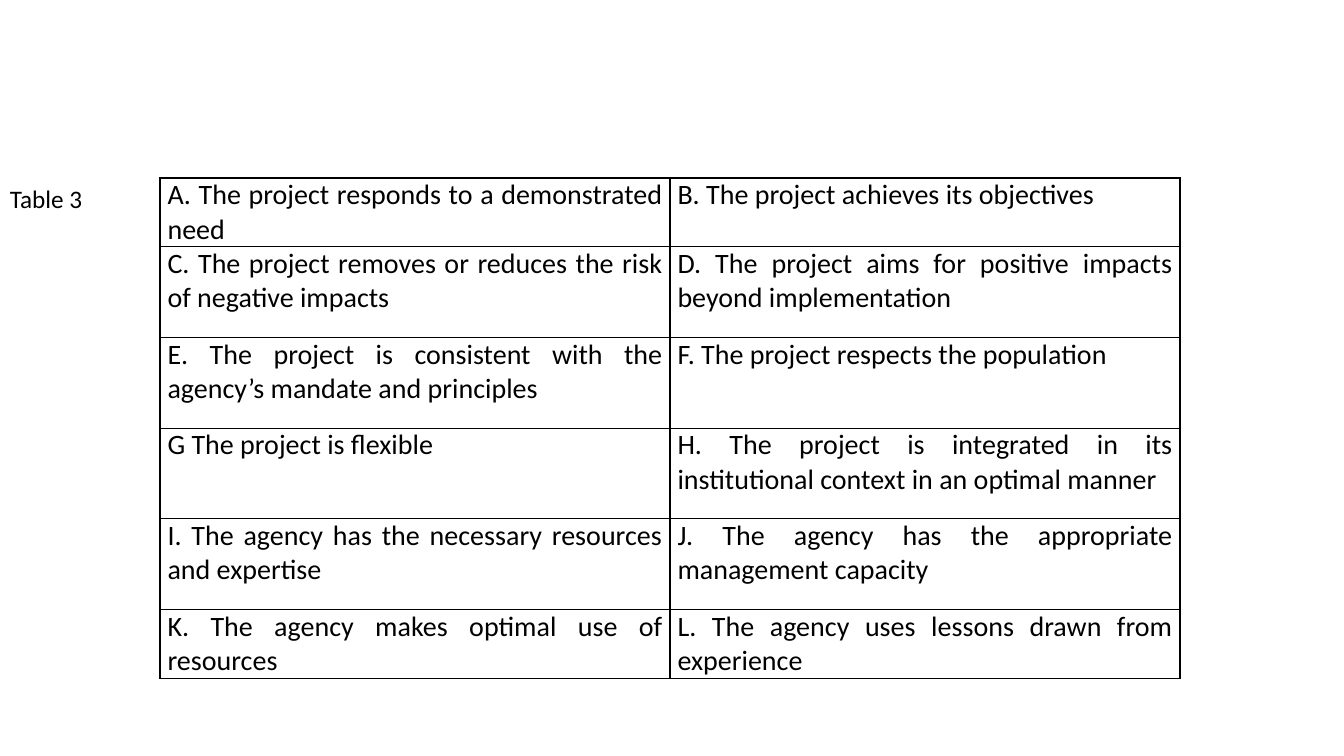
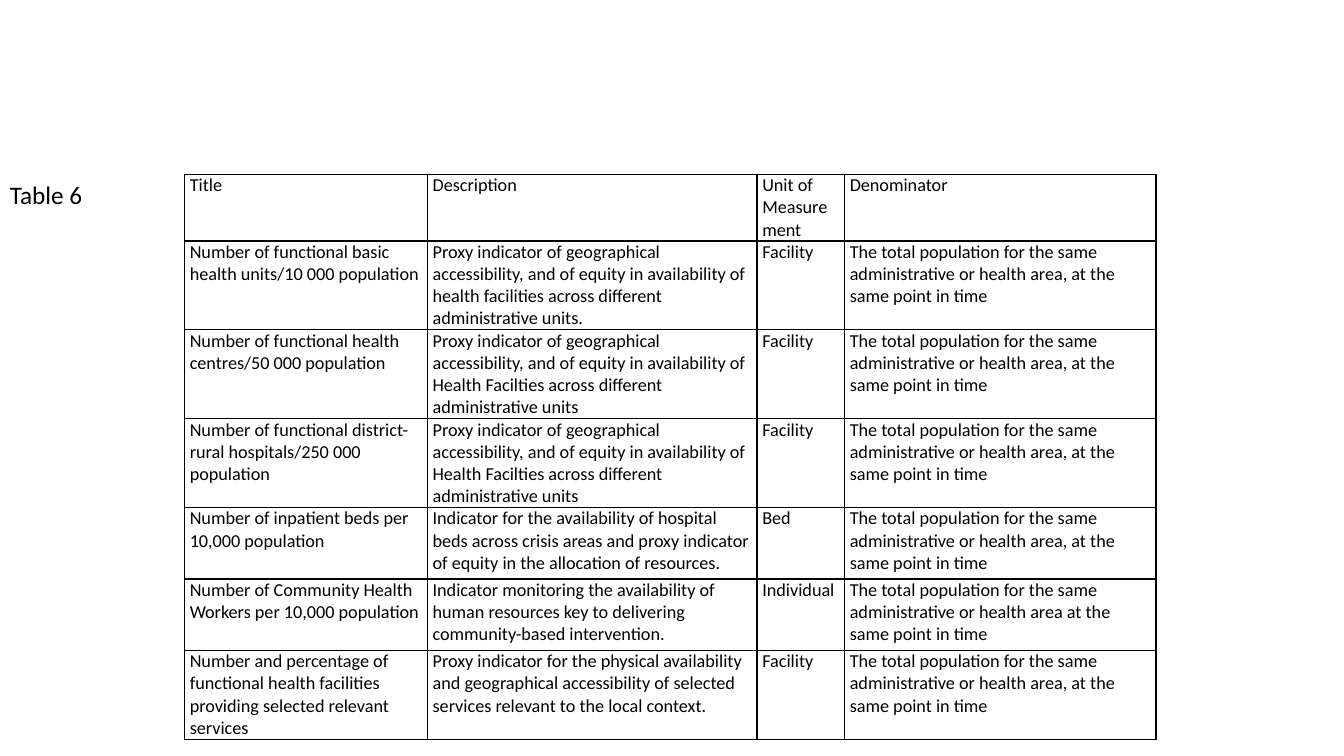
from dataclasses import dataclass

from lxml.etree import SubElement
from pptx import Presentation
from pptx.dml.color import RGBColor
from pptx.enum.text import MSO_AUTO_SIZE, PP_ALIGN
from pptx.oxml.ns import qn
from pptx.slide import Slide
from pptx.table import _Cell
from pptx.util import Pt


@dataclass(frozen=True)
class Theme:
    font: str = "Calibri"
    ink: str = "000000"
    rule: float = 1
    label: float = 18
    large: float = 20
    small: float = 13


@dataclass(frozen=True)
class Sheet:
    label: str
    drop: float
    left: float
    top: float
    cols: list[float]
    rows: list[float]
    inset: float
    size: float
    align: PP_ALIGN
    cells: list[tuple[str, ...]]


THEME = Theme()
AREA = "The total population for the same administrative or health area"
TOTAL = f"{AREA}, at the same point in time"
ACCESS = "Proxy indicator of geographical accessibility, and of equity in availability of"
ACROSS = "across different administrative units"

SHEETS = [
    Sheet(
        "Table 3", 29, 114.3, 127.2,
        [364.3] * 2, [48.8] + [64.8] * 4 + [48.8],
        5.4, THEME.large, PP_ALIGN.JUSTIFY,
        [
            ("A. The project responds to a demonstrated need",
             "B. The project achieves its objectives"),
            ("C. The project removes or reduces the risk of negative impacts",
             "D. The project aims for positive impacts beyond implementation"),
            ("E. The project is consistent with the agency’s mandate and principles",
             "F. The project respects the population"),
            ("G The project is flexible",
             "H. The project is integrated in its institutional context in an optimal manner"),
            ("I. The agency has the necessary resources and expertise",
             "J. The agency has the appropriate management capacity"),
            ("K. The agency makes optimal use of resources",
             "L. The agency uses lessons drawn from experience"),
        ],
    ),
    Sheet(
        "Table 6", 51, 131.8, 124.6,
        [173.5, 235.5, 62.5, 222.5], [47.5] + [63.5] * 3 + [51] * 2 + [63.5],
        3.75, THEME.small, PP_ALIGN.LEFT,
        [
            ("Title", "Description", "Unit of Measurement", "Denominator"),
            ("Number of functional basic health units/10 000 population",
             f"{ACCESS} health facilities {ACROSS}.", "Facility", TOTAL),
            ("Number of functional health centres/50 000 population",
             f"{ACCESS} Health Facilties {ACROSS}", "Facility", TOTAL),
            ("Number of functional district-rural hospitals/250 000 population",
             f"{ACCESS} Health Facilties {ACROSS}", "Facility", TOTAL),
            ("Number of inpatient beds per 10,000 population",
             "Indicator for the availability of hospital beds across crisis areas "
             "and proxy indicator of equity in the allocation of resources.",
             "Bed", TOTAL),
            ("Number of Community Health Workers per 10,000 population",
             "Indicator monitoring the availability of human resources key to "
             "delivering community-based intervention.",
             "Individual", f"{AREA} at the same point in time"),
            ("Number and percentage of functional health facilities providing "
             "selected relevant services",
             "Proxy indicator for the physical availability and geographical "
             "accessibility of selected services relevant to the local context.",
             "Facility", TOTAL),
        ],
    ),
]


def write(frame, text: str, size: float, align: PP_ALIGN) -> None:
    line = frame.paragraphs[0]
    line.text = text
    line.alignment = align
    line.font.name = THEME.font
    line.font.size = Pt(size)
    line.font.color.rgb = RGBColor.from_string(THEME.ink)


def frame_cell(cell: _Cell) -> None:
    props = cell._tc.get_or_add_tcPr()
    for side in "LRTB":
        edge = SubElement(props, qn(f"a:ln{side}"), w=str(Pt(THEME.rule)))
        fill = SubElement(edge, qn("a:solidFill"))
        SubElement(fill, qn("a:srgbClr"), val=THEME.ink)
    cell.fill.background()


def add_grid(slide: Slide, sheet: Sheet) -> None:
    table = slide.shapes.add_table(
        len(sheet.rows), len(sheet.cols), Pt(sheet.left), Pt(sheet.top),
        Pt(sum(sheet.cols)), Pt(sum(sheet.rows)),
    ).table
    table.first_row = False
    table.horz_banding = False
    for col, width in zip(table.columns, sheet.cols):
        col.width = Pt(width)
    for row, height, texts in zip(table.rows, sheet.rows, sheet.cells):
        row.height = Pt(height)
        for cell, text in zip(row.cells, texts):
            cell.margin_left = cell.margin_right = Pt(sheet.inset)
            cell.margin_top = cell.margin_bottom = Pt(0)
            write(cell.text_frame, text, sheet.size, sheet.align)
            frame_cell(cell)


def add_label(slide: Slide, sheet: Sheet) -> None:
    box = slide.shapes.add_textbox(Pt(0), Pt(sheet.top), Pt(67), Pt(sheet.drop))
    frame = box.text_frame
    frame.word_wrap = False
    frame.auto_size = MSO_AUTO_SIZE.SHAPE_TO_FIT_TEXT
    write(frame, sheet.label, THEME.label, PP_ALIGN.LEFT)


def main() -> None:
    deck = Presentation()
    deck.slide_width = Pt(960)
    deck.slide_height = Pt(540)
    for sheet in SHEETS:
        slide = deck.slides.add_slide(deck.slide_layouts[6])
        add_grid(slide, sheet)
        add_label(slide, sheet)
    deck.save("out.pptx")


if __name__ == "__main__":
    main()
